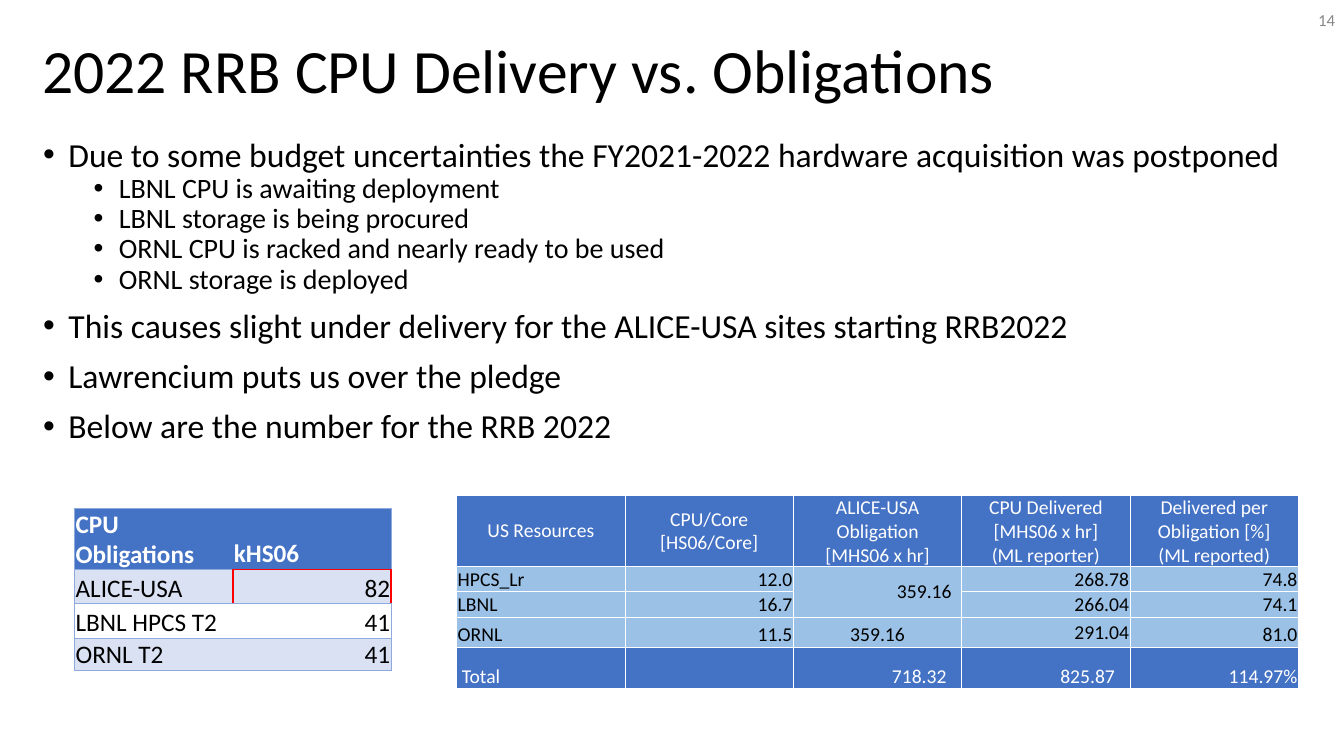
from pptx import Presentation
from pptx import util as u
from pptx.dml.color import RGBColor
from pptx.enum import text
from pptx.oxml import parse_xml
from pptx.oxml.ns import nsdecls

BLACK, WHITE, GREY = "000000", "FFFFFF", "888888"
BLUE, PALE, SKY = "4472C4", "D9E1F2", "9BC2E6"
EDGE, RED = ("8EA9DB", 0.5), ("FF0000", 1.5)
LINE = (WHITE, 0.5)

TITLE = "2022 RRB CPU Delivery vs. Obligations"
PAGE = "14"
POINTS = [
    (0, "Due to some budget uncertainties the FY2021-2022 hardware acquisition was postponed"),
    (1, "LBNL CPU is awaiting deployment"),
    (1, "LBNL storage is being procured"),
    (1, "ORNL CPU is racked and nearly ready to be used"),
    (1, "ORNL storage is deployed"),
    (0, "This causes slight under delivery for the ALICE-USA sites starting RRB2022"),
    (0, "Lawrencium puts us over the pledge"),
    (0, "Below are the number for the RRB 2022"),
]
PLEDGE = [
    ("CPU Obligations", "kHS06"),
    ("ALICE-USA", "82"),
    ("LBNL HPCS T2", "41"),
    ("ORNL T2", "41"),
]
SITES = [
    ("US Resources", "CPU/Core\n[HS06/Core]", "ALICE-USA Obligation\n[MHS06 x hr]",
     "CPU Delivered\n[MHS06 x hr]\n(ML reporter)", "Delivered per Obligation [%]\n(ML reported)"),
    ("HPCS_Lr", "12.0", "359.16", "268.78", "74.8"),
    ("LBNL", "16.7", "", "266.04", "74.1"),
    ("ORNL", "11.5", "359.16", "291.04", "81.0"),
    ("Total", "", "718.32", "825.87", "114.97%"),
]
LEFT, MID, RIGHT = text.PP_ALIGN.LEFT, text.PP_ALIGN.CENTER, text.PP_ALIGN.RIGHT
TOP, HALF, LOW = (text.MSO_ANCHOR.TOP, text.MSO_ANCHOR.MIDDLE, text.MSO_ANCHOR.BOTTOM)


def shade(hue):
    """Return the colour for a hex string."""
    return RGBColor.from_string(hue)


def write(para, words, size, hue, bold=False):
    """Add words to a paragraph, with a line break at each newline."""
    for num, line in enumerate(words.split("\n")):
        if num:
            para.add_line_break()
        run = para.add_run()
        run.text = line
        font = run.font
        font.name, font.size, font.bold = "Calibri", u.Pt(size), bold
        font.color.rgb = shade(hue)


def box(slide, area, anchor):
    """Add a wrapping text box and return its frame."""
    frame = slide.shapes.add_textbox(*map(u.Inches, area)).text_frame
    frame.word_wrap = True
    frame.vertical_anchor = anchor
    return frame


def bullet(para, level):
    """Give a paragraph a hanging bullet for its level."""
    props = para._p.get_or_add_pPr()
    props.set("marL", str(u.Inches(0.25 + 0.5 * level)))
    props.set("indent", str(u.Inches(-0.25)))
    for part in (f'<a:buClr {nsdecls("a")}><a:srgbClr val="{BLACK}"/></a:buClr>',
                 f'<a:buFont {nsdecls("a")} typeface="Arial"/>',
                 f'<a:buChar {nsdecls("a")} char="•"/>'):
        props.append(parse_xml(part))
    para.level = level


def border(cell, sides):
    """Draw the given sides of a cell and clear the others."""
    props = cell._tc.get_or_add_tcPr()
    for side in "LRTB":
        hue, width = sides.get(side, (None, 0))
        fill = f'<a:solidFill><a:srgbClr val="{hue}"/></a:solidFill>' if hue else "<a:noFill/>"
        props.append(parse_xml(
            f'<a:ln{side} {nsdecls("a")} w="{u.Pt(width)}">{fill}</a:ln{side}>'))


def grid(slide, spot, wide, highs, cols):
    """Add a plain table with equal columns."""
    size = (wide * cols, sum(highs))
    table = slide.shapes.add_table(len(highs), cols, *map(u.Inches, spot + size)).table
    table.first_row = table.horz_banding = False
    for col in table.columns:
        col.width = u.Inches(wide)
    for row, high in zip(table.rows, highs):
        row.height = u.Inches(high)
    return table


def put(cell, words, size, hue, fill, sides, align, anchor, bold=False, pad=0.01):
    """Fill in one table cell."""
    border(cell, sides)
    cell.fill.solid()
    cell.fill.fore_color.rgb = shade(fill)
    cell.margin_left = cell.margin_right = u.Inches(pad)
    cell.margin_top, cell.margin_bottom = u.Inches(0.01), 0
    cell.vertical_anchor = anchor
    para = cell.text_frame.paragraphs[0]
    para.alignment = align
    if words:
        write(para, words, size, hue, bold)


def pledges(slide):
    """Build the table of pledged power."""
    table = grid(slide, (0.74, 5.04), 1.57, (0.61, 0.34, 0.34, 0.32), 2)
    for r, row in enumerate(PLEDGE):
        for c, words in enumerate(row):
            sides = {"T": EDGE, "B": EDGE, "LR"[c]: EDGE}
            if (r, c) == (0, 1):
                sides["B"] = RED
            elif (r, c) == (1, 0):
                sides["R"] = RED
            elif (r, c) == (1, 1):
                sides.update(L=RED, T=RED, R=RED)
            put(table.cell(r, c), words, 18, BLACK if r else WHITE,
                (BLUE, PALE, WHITE, PALE)[r], sides,
                RIGHT if r and c else LEFT, LOW, bold=r == 0)


def sites(slide):
    """Build the table of delivered power."""
    table = grid(slide, (4.53, 4.91), 1.67, (0.67, 0.25, 0.25, 0.3, 0.41), 5)
    last = len(SITES) - 1
    for r, row in enumerate(SITES):
        for c, words in enumerate(row):
            edge = r in (0, last)
            align = MID if r == 0 or (r, c) == (3, 2) else RIGHT if c else LEFT
            anchor = HALF if r == 0 or (r < last and c == 3) or (r, c) == (1, 2) else LOW
            pad = 0.01
            if r == last and c < 4:
                pad = 0.15 if c else 0.05
            elif (r, c) == (1, 2):
                pad = 0.1
            put(table.cell(r, c), words, 14, WHITE if edge else BLACK,
                BLUE if edge else SKY, dict.fromkeys("LRTB", LINE), align, anchor, pad=pad)
    table.cell(1, 2).merge(table.cell(2, 2))


def main():
    """Build and save the slide."""
    deck = Presentation()
    deck.slide_width, deck.slide_height = u.Inches(13.33), u.Inches(7.5)
    slide = deck.slides.add_slide(deck.slide_layouts[6])

    head = box(slide, (0.32, 0, 12.11, 1.45), HALF).paragraphs[0]
    head.line_spacing = 0.9
    write(head, TITLE, 44, BLACK)

    body = box(slide, (0.33, 1.32, 12.59, 5.42), TOP)
    for num, (level, words) in enumerate(POINTS):
        para = body.add_paragraph() if num else body.paragraphs[0]
        bullet(para, level)
        para.line_spacing = 0.9
        para.space_before = u.Pt(10 if num and not level else 0)
        write(para, words, 20 if level else 24, BLACK)

    page = box(slide, (12.92, 0, 0.42, 0.4), HALF).paragraphs[0]
    page.alignment = RIGHT
    write(page, PAGE, 12, GREY)

    pledges(slide)
    sites(slide)
    deck.save("out.pptx")


if __name__ == "__main__":
    main()
